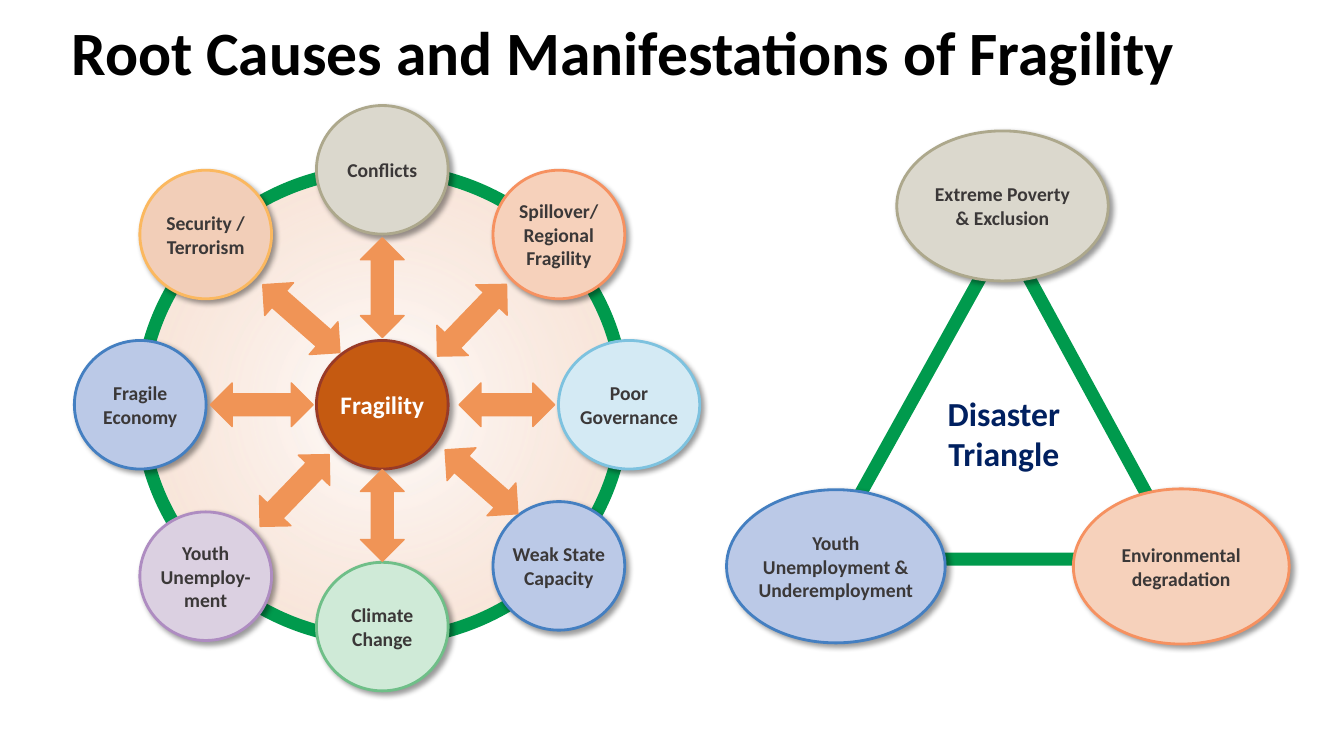
from pptx import Presentation
from pptx.dml.color import RGBColor
from pptx.enum.shapes import MSO_SHAPE
from pptx.enum.text import MSO_ANCHOR, PP_ALIGN
from pptx.oxml import parse_xml
from pptx.oxml.ns import qn
from pptx.util import Cm, Pt

NS = 'xmlns:a="http://schemas.openxmlformats.org/drawingml/2006/main"'
GREEN = "009A4D"
ORANGE = "F09456"
SIZE = (3.32, 3.24)

CAUSES = [
    ("Conflicts", 0, -5.92, "DBD8CD", "ADA88C"),
    ("Spillover/ Regional Fragility", 4.45, -4.29, "F6D1BB", "F69160"),
    ("Poor Governance", 6.22, 0, "D4EAF4", "7DC2DF"),
    ("Weak State Capacity", 4.45, 4.06, "BBC9E7", "447FC1"),
    ("Climate Change", 0, 5.59, "CFEAD7", "6FBF88"),
    ("Youth Unemploy-ment", -4.45, 4.32, "DBD0E1", "AE8CC1"),
    ("Fragile Economy", -6.1, 0, "BBC9E7", "447FC1"),
    ("Security / Terrorism", -4.45, -4.29, "F2CEB8", "FBB85F"),
]
ARROWS = [
    (2.26, -2.13, 2.51, 43.9),
    (-2.04, -2.17, 2.59, 311.3),
    (3.14, 0, 2.41, 90),
    (-3.04, 0, 2.59, 90),
    (0, 2.79, 2.31, 0),
    (0, -2.95, 2.51, 0),
    (-2.21, 2.16, 2.51, 43.9),
    (2.5, 1.94, 2.44, 311.3),
]
CORNERS = [
    ("Extreme Poverty & Exclusion", (4.29, 0, 5.33, 3.78), "DBD8CD", "ADA88C"),
    ("Youth Unemployment & Underemployment", (0, 9.04, 5.51, 3.86), "BBC9E7", "447FC1"),
    ("Environmental degradation", (8.74, 9.02, 5.44, 3.91), "F6D1BB", "F69160"),
]


def color(text):
    """Return the colour for a hex string."""
    return RGBColor.from_string(text)


def around(x, y, wide, high):
    """Return the box of the given size centred on a point."""
    return x - wide / 2, y - high / 2, wide, high


def shift(box, x, y):
    """Return the box moved by x and y."""
    return box[0] + x, box[1] + y, box[2], box[3]


def write(shape, text, size, ink, align=PP_ALIGN.CENTER):
    """Put bold text into a shape."""
    frame = shape.text_frame
    frame.word_wrap = True
    frame.text = text
    par = frame.paragraphs[0]
    par.alignment = align
    font = par.runs[0].font
    font.name, font.size, font.bold = "Calibri", Pt(size), True
    font.color.rgb = color(ink)


def draw(group, kind, box, fill, line, width):
    """Add a flat shape, unfilled when fill is None."""
    shape = group.shapes.add_shape(kind, *map(Cm, box))
    shape.shadow.inherit = False
    if fill:
        shape.fill.solid()
        shape.fill.fore_color.rgb = color(fill)
    else:
        shape.fill.background()
    shape.line.color.rgb = color(line)
    shape.line.width = Pt(width)
    return shape


def node(group, text, box, fill, line, size=14, ink="3B3838"):
    """Add a labelled ellipse with a soft shadow."""
    shape = draw(group, MSO_SHAPE.OVAL, box, fill, line, 2)
    shape._element.spPr.find(qn("a:effectLst")).append(parse_xml(
        f'<a:outerShdw {NS} blurRad="50800" dist="38100" dir="2700000" algn="tl" rotWithShape="0">'
        '<a:srgbClr val="000000"><a:alpha val="40000"/></a:srgbClr></a:outerShdw>'))
    write(shape, text, size, ink)
    frame = shape.text_frame
    frame.vertical_anchor = MSO_ANCHOR.MIDDLE
    frame.margin_left = frame.margin_right = 0
    frame.margin_top = frame.margin_bottom = 0


def glow(shape):
    """Fill a shape with a round gradient from white to pale orange."""
    stops = [(0, "FFFFFF", 100), (93, "F2CEB8", 57), (100, "F4B183", 17)]
    marks = "".join(
        f'<a:gs pos="{pos * 1000}"><a:srgbClr val="{tint}">'
        f'<a:alpha val="{alpha * 1000}"/></a:srgbClr></a:gs>'
        for pos, tint, alpha in stops)
    old = shape._element.spPr.find(qn("a:noFill"))
    old.getparent().replace(old, parse_xml(
        f'<a:gradFill {NS} rotWithShape="1"><a:gsLst>{marks}</a:gsLst><a:path path="circle">'
        '<a:fillToRect l="50000" t="50000" r="50000" b="50000"/></a:path></a:gradFill>'))


def title(slide, box):
    """Add the slide heading."""
    head = slide.shapes.add_textbox(*map(Cm, box))
    write(head, "Root Causes and Manifestations of Fragility", 44, "000000", PP_ALIGN.LEFT)
    head.text_frame.vertical_anchor = MSO_ANCHOR.MIDDLE
    head.text_frame.paragraphs[0].line_spacing = 0.9


def wheel(slide, box):
    """Add the ring of causes around fragility."""
    group = slide.shapes.add_group_shape()
    left, top, wide, high = box
    x, y = left + wide / 2, top + high / 2
    glow(draw(group, MSO_SHAPE.OVAL, box, None, GREEN, 9.25))
    for text, dx, dy, fill, line in CAUSES:
        span = 3.56 if text == "Poor Governance" else SIZE[0]
        node(group, text, around(x + dx, y + dy, span, SIZE[1]), fill, line)
    node(group, "Fragility", around(x, y, *SIZE), "C55A11", "993A27", 18, "FFFFFF")
    for dx, dy, size, turn in ARROWS:
        arrow = draw(group, MSO_SHAPE.UP_DOWN_ARROW,
                     around(x + dx, y + dy, 1.1, size), ORANGE, ORANGE, 1)
        arrow.rotation = turn


def trio(slide, box):
    """Add the disaster triangle with its three corners."""
    group = slide.shapes.add_group_shape()
    left, top = box[:2]
    frame = draw(group, MSO_SHAPE.ISOSCELES_TRIANGLE,
                 shift((2.46, 2.59, 9.02, 8.2), left, top), None, GREEN, 9.25)
    frame.adjustments[0] = 0.505
    for text, place, fill, line in CORNERS:
        node(group, text, shift(place, left, top), fill, line)
    label = group.shapes.add_textbox(*map(Cm, shift((5.16, 6.48, 3.66, 2.31), left, top)))
    write(label, "Disaster Triangle", 24, "002060")


def main():
    """Build and save the slide."""
    deck = Presentation()
    deck.slide_width, deck.slide_height = Cm(33.87), Cm(19.05)
    slide = deck.slides.add_slide(deck.slide_layouts[6])
    title(slide, (1.55, 0.05, 30.94, 2.69))
    wheel(slide, (3.55, 4.28, 12.17, 11.84))
    trio(slide, (18.31, 3.3, 14.18, 12.93))
    deck.save("out.pptx")


if __name__ == "__main__":
    main()
